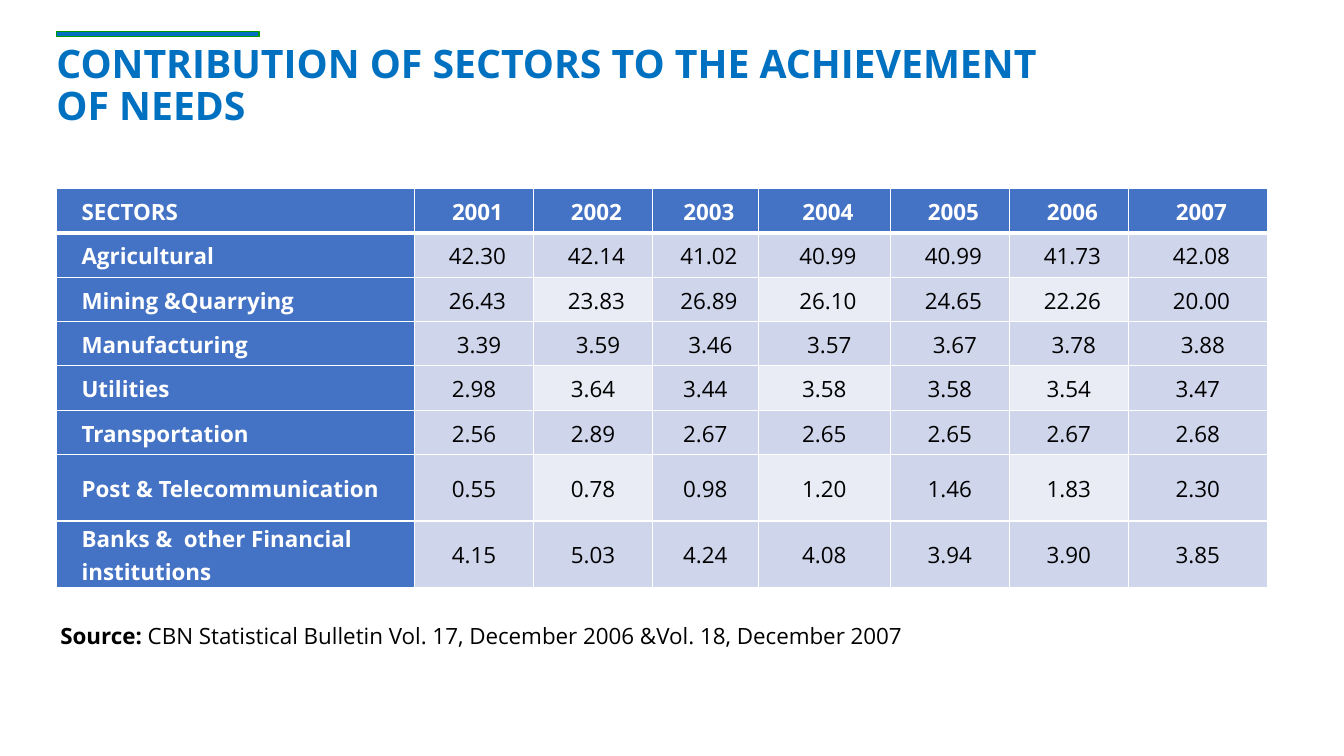
from lxml import etree
from pptx import Presentation
from pptx.dml.color import RGBColor
from pptx.enum.shapes import MSO_SHAPE
from pptx.enum.text import MSO_ANCHOR, PP_ALIGN
from pptx.oxml.ns import qn
from pptx.util import Inches, Pt

RECTANGLE = MSO_SHAPE.RECTANGLE
MIDDLE = MSO_ANCHOR.MIDDLE
LEFT, CENTER, JUSTIFY = PP_ALIGN.LEFT, PP_ALIGN.CENTER, PP_ALIGN.JUSTIFY
FONT = "Open Sans"
BLUE, GREEN, WHITE, BLACK = "0070C0", "009900", "FFFFFF", "000000"
HEADER_FILL, BAND_FILL, LIGHT_FILL = "4472C4", "CFD5EA", "E9EBF5"

YEARS = range(2001, 2008)
SECTORS = [
    ("Agricultural", 0.13, [42.30, 42.14, 41.02, 40.99, 40.99, 41.73, 42.08]),
    ("Mining &Quarrying", 0.13, [26.43, 23.83, 26.89, 26.10, 24.65, 22.26, 20.00]),
    ("Manufacturing", 0.16, [3.39, 3.59, 3.46, 3.57, 3.67, 3.78, 3.88]),
    ("Utilities", 0.06, [2.98, 3.64, 3.44, 3.58, 3.58, 3.54, 3.47]),
    ("Transportation", 0.06, [2.56, 2.89, 2.67, 2.65, 2.65, 2.67, 2.68]),
    ("Post & Telecommunication", 0.06, [0.55, 0.78, 0.98, 1.20, 1.46, 1.83, 2.30]),
    ("Banks &  other Financial institutions", 0.06, [4.15, 5.03, 4.24, 4.08, 3.94, 3.90, 3.85]),
]
COLUMN_WIDTHS = [3.55, 1.18, 1.18, 1.05, 1.31, 1.18, 1.18, 1.38]
ROW_HEIGHTS = [0.44] * 6 + [0.66] * 2


def color(value):
    return RGBColor.from_string(value)


def add_span(para, text, size, fill, bold):
    span = para.add_run()
    span.text = text
    span.font.name = FONT
    span.font.size = Pt(size)
    span.font.bold = bold
    span.font.color.rgb = color(fill)


def format_body(para, indent, align):
    para._p.get_or_add_pPr().set("marL", str(Inches(indent)))
    para.alignment = align
    para.line_spacing = 1.07
    para.space_after = Pt(8)


def set_border(cell, side, width):
    line = etree.SubElement(cell._tc.get_or_add_tcPr(), qn(f"a:{side}"), w=str(Pt(width)))
    fill = etree.SubElement(line, qn("a:solidFill"))
    etree.SubElement(fill, qn("a:srgbClr"), val=WHITE)


def add_title(page, left, top, width, height):
    accent = page.shapes.add_shape(
        RECTANGLE, Inches(left), Inches(top), Inches(2.01), Inches(0.05))
    accent.shadow.inherit = False
    accent.fill.solid()
    accent.fill.fore_color.rgb = color(BLUE)
    accent.line.color.rgb = color(GREEN)
    accent.line.width = Pt(1)
    box = page.shapes.add_textbox(
        Inches(left), Inches(top + 0.13), Inches(width), Inches(height - 0.13))
    frame = box.text_frame
    frame.word_wrap = True
    frame.margin_left = frame.margin_right = frame.margin_top = frame.margin_bottom = 0
    lines = ["CONTRIBUTION OF SECTORS TO THE ACHIEVEMENT", "OF NEEDS"]
    for index, text in enumerate(lines):
        para = frame.add_paragraph() if index else frame.paragraphs[0]
        para.line_spacing = 0.9
        add_span(para, text, 28, BLUE, True)


def fill_cell(cell, text, indent, align, fill, is_label, is_header, under_header):
    cell.vertical_anchor = MIDDLE
    cell.margin_left = cell.margin_right = Inches(0.07)
    cell.margin_top = cell.margin_bottom = 0
    for side in ("lnL", "lnR"):
        set_border(cell, side, 1)
    set_border(cell, "lnT", 3 if under_header else 1)
    set_border(cell, "lnB", 3 if is_header else 1)
    cell.fill.solid()
    cell.fill.fore_color.rgb = color(fill)
    para = cell.text_frame.paragraphs[0]
    format_body(para, indent, align)
    add_span(para, text, 16, WHITE if is_label else BLACK, is_label)


def add_sector_table(page, left, top, width, height):
    rows = [("SECTORS ", 0.13, [f"{year} " for year in YEARS])]
    rows += [(name, indent, [f"{value:.2f} " for value in values])
             for name, indent, values in SECTORS]
    table = page.shapes.add_table(
        len(rows), len(COLUMN_WIDTHS),
        Inches(left), Inches(top), Inches(width), Inches(height)).table
    table.horz_banding = False
    for column, size in zip(table.columns, COLUMN_WIDTHS):
        column.width = Inches(size)
    for row, size in zip(table.rows, ROW_HEIGHTS):
        row.height = Inches(size)
    for r, (name, indent, values) in enumerate(rows):
        for c, text in enumerate([name] + values):
            is_label = r == 0 or c == 0
            light = r % 2 == 0 and c % 2 == 0
            fill = HEADER_FILL if is_label else LIGHT_FILL if light else BAND_FILL
            align = CENTER if c else LEFT if r else JUSTIFY
            fill_cell(table.cell(r, c), text, indent if c else 0.18, align,
                      fill, is_label, r == 0, r == 1)


def add_source(page, left, top, width, height):
    box = page.shapes.add_textbox(Inches(left), Inches(top), Inches(width), Inches(height))
    box.text_frame.word_wrap = True
    para = box.text_frame.paragraphs[0]
    format_body(para, 0.5, LEFT)
    add_span(para, "Source:", 16, BLACK, True)
    add_span(para, " CBN Statistical Bulletin Vol. 17, December 2006 &Vol. 18, December 2007",
             16, BLACK, False)


def main():
    deck = Presentation()
    deck.slide_width, deck.slide_height = Inches(13.33), Inches(7.5)
    page = deck.slides.add_slide(deck.slide_layouts[6])
    add_title(page, 0.56, 0.31, 11.27, 1.07)
    add_sector_table(page, 0.56, 1.87, 12.02, 3.96)
    add_source(page, 0, 6.1, 10.81, 0.38)
    deck.save("out.pptx")


if __name__ == "__main__":
    main()
